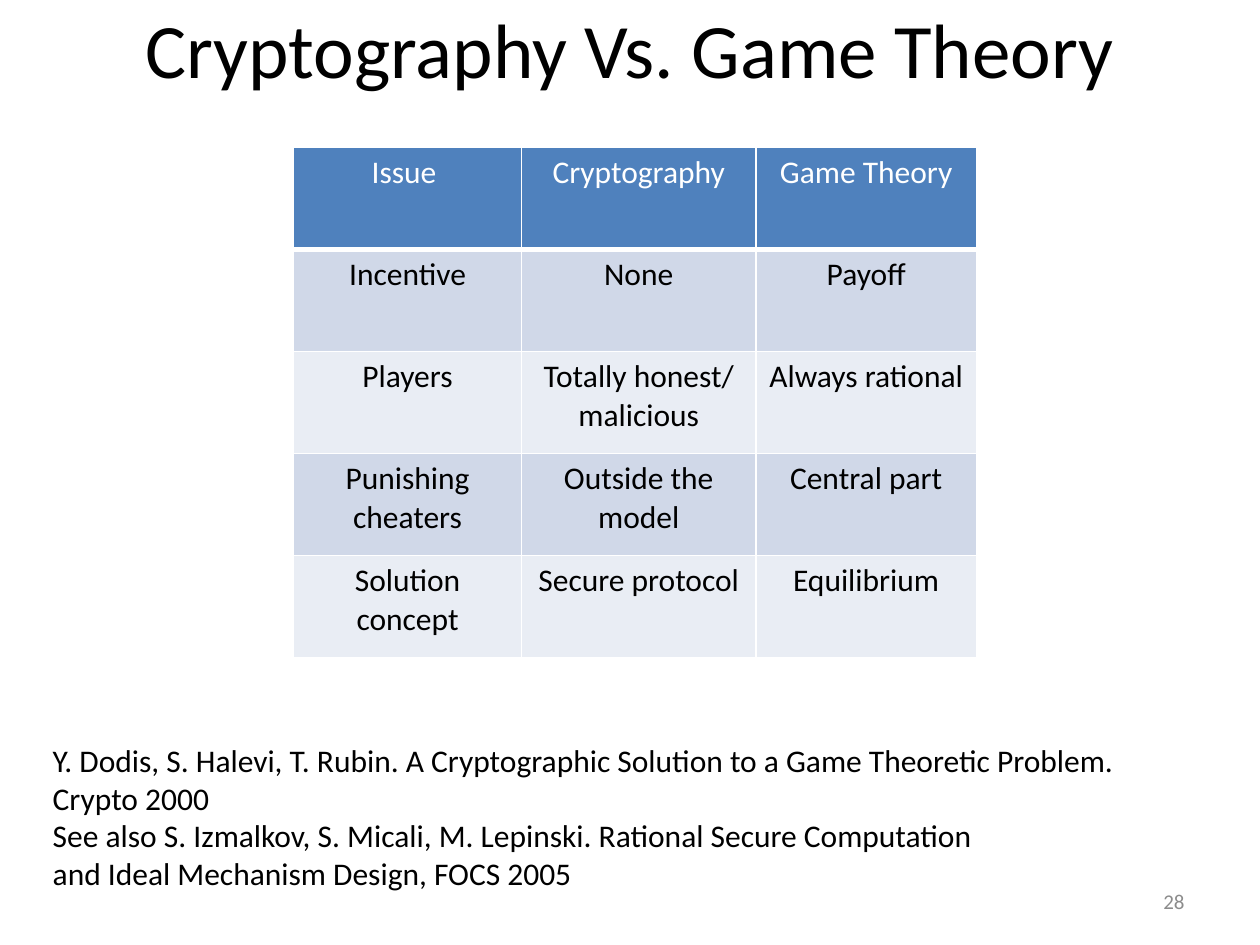
from lxml.etree import SubElement
from pptx import Presentation
from pptx.dml.color import RGBColor
from pptx.enum.text import MSO_ANCHOR, PP_ALIGN
from pptx.oxml.ns import qn
from pptx.util import Inches, Pt

HUES = {"ink": "000000", "white": "FFFFFF", "head": "4F81BD",
        "dark": "D0D8E8", "light": "E9EDF4", "grey": "8C8C8C"}

COLS = [1.81, 1.86, 1.75]
HIGH = 0.81
ROWS = [
    ["Issue ", "Cryptography", "Game Theory"],
    ["Incentive", "None", "Payoff"],
    ["Players", "Totally honest/\nmalicious", "Always rational"],
    ["Punishing cheaters", "Outside the model", "Central part"],
    ["Solution concept", "Secure protocol", "Equilibrium"],
]
REFS = [
    "Y. Dodis, S. Halevi, T. Rubin. A Cryptographic Solution to a Game Theoretic Problem.",
    "Crypto 2000",
    "See also S. Izmalkov, S. Micali, M. Lepinski. Rational Secure Computation \n"
    "and Ideal Mechanism Design, FOCS 2005",
]


def shade(hue):
    return RGBColor.from_string(HUES[hue])


def write(frame, lines, size=18, hue="ink", align=PP_ALIGN.LEFT):
    """Fill a text frame, one paragraph for each line."""
    style = {"name": "Calibri", "size": Pt(size), "bold": False}
    for i, line in enumerate(lines):
        para = frame.add_paragraph() if i else frame.paragraphs[0]
        para.text = line
        para.alignment = align
        for run in para.runs:
            for key, value in style.items():
                setattr(run.font, key, value)
            run.font.color.rgb = shade(hue)


def add_text(slide, box, lines, wrap=True, anchor=MSO_ANCHOR.TOP, **look):
    frame = slide.shapes.add_textbox(*map(Inches, box)).text_frame
    frame.word_wrap = wrap
    frame.vertical_anchor = anchor
    write(frame, lines, **look)


def edge(cell, foot):
    """Draw white cell borders; foot is the bottom width in points."""
    props = cell._tc.get_or_add_tcPr()
    widths = {"a:lnL": 1, "a:lnR": 1, "a:lnT": 1, "a:lnB": foot}
    for i, (tag, width) in enumerate(widths.items()):
        line = SubElement(props, qn(tag), w=str(Pt(width)))
        fill = SubElement(line, qn("a:solidFill"))
        SubElement(fill, qn("a:srgbClr"), val=HUES["white"])
        props.insert(i, line)  # borders come before the fill


def add_grid(slide, left, top):
    size = map(Inches, (left, top, sum(COLS), HIGH * len(ROWS)))
    table = slide.shapes.add_table(len(ROWS), len(COLS), *size).table
    for col, width in zip(table.columns, COLS):
        col.width = Inches(width)
    for r, row in enumerate(ROWS):
        table.rows[r].height = Inches(HIGH)
        band = "head" if r == 0 else "dark" if r % 2 else "light"
        for c, text in enumerate(row):
            cell = table.cell(r, c)
            cell.fill.solid()
            cell.fill.fore_color.rgb = shade(band)
            edge(cell, 1 if r else 3)
            write(cell.text_frame, [text], hue="ink" if r else "white",
                  align=PP_ALIGN.CENTER)


def main():
    deck = Presentation()
    deck.slide_width, deck.slide_height = Inches(10), Inches(7.5)
    slide = deck.slides.add_slide(deck.slide_layouts[6])

    # Title
    add_text(slide, (0.5, -0.25, 9, 1.25), ["Cryptography Vs. Game Theory"],
             anchor=MSO_ANCHOR.MIDDLE, size=44, align=PP_ALIGN.CENTER)
    # Comparison table
    add_grid(slide, 2.33, 1.17)
    # Slide number
    add_text(slide, (7.17, 6.95, 2.33, 0.4), ["28"], anchor=MSO_ANCHOR.MIDDLE,
             size=12, hue="grey", align=PP_ALIGN.RIGHT)
    # References
    add_text(slide, (0.32, 5.83, 9.68, 1.31), REFS, wrap=False)

    deck.save("out.pptx")


if __name__ == "__main__":
    main()
